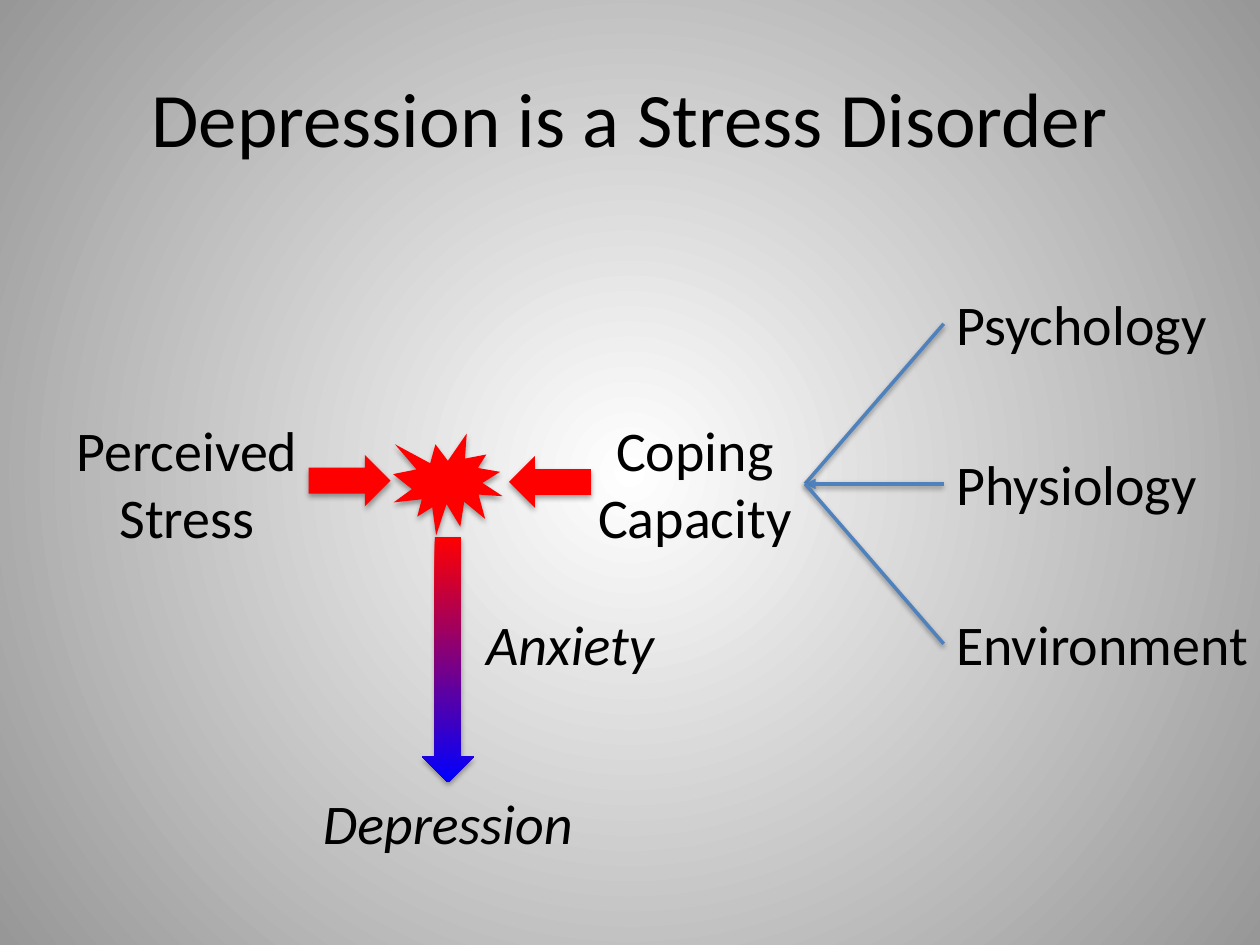
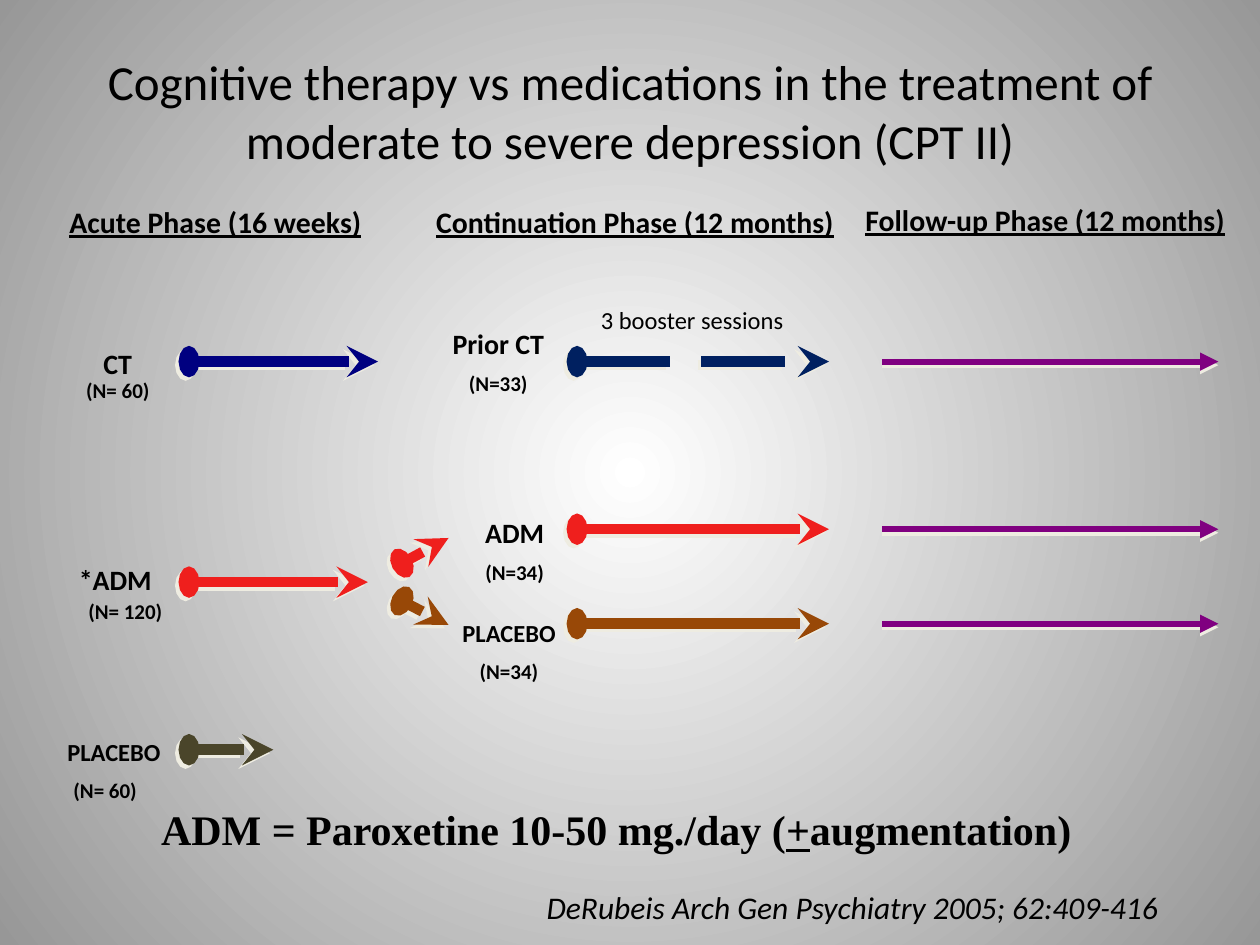
from dataclasses import dataclass

from lxml import etree
from pptx import Presentation
from pptx.dml.color import RGBColor
from pptx.enum.dml import MSO_LINE
from pptx.enum.shapes import MSO_CONNECTOR, MSO_SHAPE
from pptx.enum.text import MSO_ANCHOR, MSO_AUTO_SIZE, PP_ALIGN
from pptx.oxml.ns import qn
from pptx.util import Emu, Inches, Pt

STRAIGHT = MSO_CONNECTOR.STRAIGHT
BURST, RIGHT, LEFT_ARROW, DOWN = (
    MSO_SHAPE.EXPLOSION1, MSO_SHAPE.RIGHT_ARROW, MSO_SHAPE.LEFT_ARROW, MSO_SHAPE.DOWN_ARROW)
LONG_DASH = MSO_LINE.LONG_DASH
CENTER, LEFT = PP_ALIGN.CENTER, PP_ALIGN.LEFT
TOP, MIDDLE = MSO_ANCHOR.TOP, MSO_ANCHOR.MIDDLE
FIT = MSO_AUTO_SIZE.SHAPE_TO_FIT_TEXT

WIDTH, HEIGHT = Inches(10), Inches(7.5)
COLS, ROWS = 100, 75


@dataclass(frozen=True)
class Theme:
    font: str = "Calibri"
    serif: str = "Times New Roman"
    ink: str = "000000"
    white: str = "FFFFFF"
    edge: str = "979797"
    red: str = "FF0000"
    blue: str = "0000FF"
    steel: str = "4F81BD"
    navy: str = "000080"
    dark_navy: str = "002060"
    scarlet: str = "EF1F1D"
    brown: str = "984807"
    olive: str = "4A452A"
    purple: str = "800080"
    title: int = 44
    long_title: int = 28
    concept: int = 32
    note: int = 24
    source: int = 18
    heading: int = 17
    arm: int = 16
    small_arm: int = 14
    count: int = 12
    soft_shadow: tuple = ("000000", 38, 3.1, 1.6, 90)
    shape_shadow: tuple = ("000000", 35, 3.1, 1.8, 90)
    arm_shadow: tuple = ("EEECE1", 100, 0, 2.8, 135)
    follow_shadow: tuple = ("EEECE1", 100, 0, 2, 90)


T = Theme()


@dataclass(frozen=True)
class Box:
    x: float
    y: float
    w: float
    h: float

    def sub(self, x, y, w, h):
        return Box(self.x + x, self.y + y, w, h)

    def point(self, x, y):
        return (Emu(round((self.x + x) * WIDTH / COLS)),
                Emu(round((self.y + y) * HEIGHT / ROWS)))

    def emu(self):
        return (*self.point(0, 0), Emu(round(self.w * WIDTH / COLS)),
                Emu(round(self.h * HEIGHT / ROWS)))


def rgb(color):
    return RGBColor.from_string(color)


def style(r, size, font=T.font, bold=False, italic=False, underline=False):
    r.font.name, r.font.size = font, Pt(size)
    r.font.bold, r.font.italic, r.font.underline = bold, italic, underline
    r.font.color.rgb = rgb(T.ink)


def text_box(s, box, anchor=TOP, wrap=False):
    tf = s.shapes.add_textbox(*box.emu()).text_frame
    tf.word_wrap, tf.auto_size, tf.vertical_anchor = wrap, FIT, anchor
    return tf


def label(s, box, lines, align=CENTER, anchor=TOP, wrap=False, gap=0, **look):
    tf = text_box(s, box, anchor, wrap)
    tf.text = "\n".join(text for text, _ in lines)
    for i, (p, (_, size)) in enumerate(zip(tf.paragraphs, lines)):
        p.alignment = align
        if i and gap:
            p.space_before = Pt(size * gap)
        style(p.runs[0], size, **look)


def arm_label(s, box, *lines, **look):
    label(s, box, lines, anchor=MIDDLE, wrap=True, gap=0.5, bold=True, **look)


def add_shadow(sp, color, alpha, blur, dist, angle):
    sp_pr = sp._element.spPr
    for old in sp_pr.findall(qn("a:effectLst")):
        sp_pr.remove(old)
    effects = etree.SubElement(sp_pr, qn("a:effectLst"))
    outer = etree.SubElement(effects, qn("a:outerShdw"), blurRad=str(Pt(blur)),
                             dist=str(Pt(dist)), dir=str(angle * 60000),
                             algn="ctr", rotWithShape="0")
    clr = etree.SubElement(outer, qn("a:srgbClr"), val=color)
    etree.SubElement(clr, qn("a:alpha"), val=str(alpha * 1000))


def set_gradient(fill, *colors):
    fill.gradient()
    for stop, color in zip(fill.gradient_stops, colors):
        stop.color.rgb = rgb(color)


def shape(s, kind, box, *colors):
    sp = s.shapes.add_shape(kind, *box.emu())
    if len(colors) > 1:
        set_gradient(sp.fill, *colors)
        sp.fill.gradient_angle = 270
    else:
        sp.fill.solid()
        sp.fill.fore_color.rgb = rgb(colors[0])
    sp.line.fill.background()
    add_shadow(sp, *T.shape_shadow)


def line(s, start, end, color, width, shadow, head=None, tail=None, dash=None):
    cx = s.shapes.add_connector(STRAIGHT, *start, *end)
    cx.line.color.rgb = rgb(color)
    cx.line.width = Pt(width)
    if dash:
        cx.line.dash_style = dash
    ln = cx.line._get_or_add_ln()
    if head:
        etree.SubElement(ln, qn("a:headEnd"), type=head, w="med", len="sm")
    if tail:
        etree.SubElement(ln, qn("a:tailEnd"), type=tail)
    add_shadow(cx, *shadow)


def arm_arrow(s, start, end, color, dash=None):
    line(s, start, end, color, 6, T.arm_shadow, "oval", "stealth", dash)


def set_background(master):
    fill = master.background.fill
    set_gradient(fill, T.white, T.edge)
    grad = master.element.find(".//" + qn("p:bg")).find(".//" + qn("a:gradFill"))
    grad.remove(grad.find(qn("a:lin")))
    circle = etree.SubElement(grad, qn("a:path"), path="circle")
    etree.SubElement(circle, qn("a:fillToRect"), l="50000", t="50000", r="50000", b="50000")


def new_slide(prs, title, box, size):
    s = prs.slides.add_slide(prs.slide_layouts[5])
    sp = s.shapes.title
    sp.left, sp.top, sp.width, sp.height = box.emu()
    tf = sp.text_frame
    tf.text, tf.word_wrap, tf.vertical_anchor = title, True, MIDDLE
    tf.paragraphs[0].alignment = CENTER
    style(tf.paragraphs[0].runs[0], size)
    return s


def place_collision(s, box):
    for x, w, words in ((0, 19.7, ("Perceived", "Stress")),
                        (41.4, 17.5, ("Coping", "Capacity"))):
        label(s, box.sub(x, 0, w, box.h), [(word, T.concept) for word in words])
    shape(s, BURST, box.sub(26.2, 1.9, 8.7, 8.1), T.red)
    shape(s, RIGHT, box.sub(19.5, 3.6, 6.5, 4.1), T.red)
    shape(s, LEFT_ARROW, box.sub(35.4, 3.7, 6.5, 4.1), T.red)


def place_coping_factors(s, box):
    pitch, text_h, text_x = 12.7, 6.4, 11
    hub = box.point(0, box.h / 2)
    factors = (("Psychology", 22.1, None), ("Physiology", 21.3, "triangle"),
               ("Environment", 25.4, None))
    for i, (name, w, tail) in enumerate(factors):
        y = i * pitch
        label(s, box.sub(text_x, y, w, text_h), [(name, T.concept)], LEFT)
        line(s, box.point(text_x, y + text_h / 2), hub, T.steel, 2, T.soft_shadow, tail=tail)


def place_outcome(s, box):
    shape(s, DOWN, box.sub(9.5, 0, 4.1, 19.5), T.red, T.blue)
    label(s, box.sub(0, 19.5, 23.1, 6.4), [("Depression", T.concept)], italic=True)
    label(s, box.sub(13.6, 5.3, 16.6, 6.4), [("Anxiety", T.concept)], LEFT, italic=True)


def heading(s, box, text):
    arm_label(s, box, (text, T.heading), underline=True)


def place_acute_phase(s, box):
    heading(s, box.sub(0, 0, 34.2, 3.8), "Acute Phase (16 weeks)")
    arms = (
        ("CT", T.arm, (5.2, 11.3, 8.3, 3.7), "(N= 60)", (4.4, 13.8, 9.9, 3), 13, 30, T.navy),
        ("*ADM", T.arm, (5, 28.4, 8.3, 3.7), "(N= 120)", (3.3, 31.3, 13.3, 3), 30.5, 29.2,
         T.scarlet),
        ("PLACEBO", T.small_arm, (0.7, 42.3, 16.7, 3.3), "(N= 60)", (4.2, 45.5, 8.3, 3), 43.8,
         21.7, T.olive),
    )
    for name, size, name_at, count, count_at, y, end, color in arms:
        arm_label(s, box.sub(*name_at), (name, size))
        arm_label(s, box.sub(*count_at), (count, T.count))
        arm_arrow(s, box.point(15, y), box.point(end, y), color)


def place_split(s, box):
    arm_arrow(s, box.point(0, 2), box.point(box.w, 0), T.scarlet)
    arm_arrow(s, box.point(0, 5), box.point(box.w, box.h), T.brown)


def place_continuation_phase(s, box):
    heading(s, box.sub(0, 0, 44.2, 3.8), "Continuation Phase (12 months)")
    arms = (
        ("Prior CT", T.arm, "(N=33)", (5.8, 9.6, 10.9, 6.7), 13, T.dark_navy, LONG_DASH),
        ("ADM", T.arm, "(N=34)", (8.4, 24.6, 8.3, 6.7), 26.3, T.scarlet, None),
        ("PLACEBO", T.small_arm, "(N=34)", (2.5, 32.6, 19.2, 6.7), 33.8, T.brown, None),
    )
    for name, size, count, name_at, y, color, dash in arms:
        arm_label(s, box.sub(*name_at), (name, size), (count, T.count))
        arm_arrow(s, box.point(17.5, y), box.point(37.5, y), color, dash)
    label(s, box.sub(18.4, 8, 18.2, 3.3), [("3 booster sessions", T.small_arm)], LEFT)


def place_follow_up_phase(s, box):
    heading(s, box.sub(0, -0.2, 32.5, 3.8), "Follow-up Phase (12 months)")
    for y in (13, 26.3, 33.8):
        line(s, box.point(3.3, y), box.point(30, y), T.purple, 3.5, T.follow_shadow,
             tail="triangle")


def place_notes(s, box):
    p = text_box(s, box.sub(0, 0, 74.3, 5)).paragraphs[0]
    for part, underline in (("ADM = Paroxetine 10-50 mg./day (", False), ("+", True),
                            ("augmentation)", False)):
        r = p.add_run()
        r.text = part
        style(r, T.note, T.serif, bold=True, underline=underline)
    label(s, box.sub(30.6, 6.7, 56.7, 4),
          [("DeRubeis Arch Gen Psychiatry 2005; 62:409-416", T.source)], LEFT, italic=True)


def stress_slide(prs):
    s = new_slide(prs, "Depression is a Stress Disorder", Box(5, 3, 90, 12.5), T.title)
    place_collision(s, Box(5, 32.5, 58.9, 11.8))
    place_coping_factors(s, Box(63.9, 22.5, 36.4, 31.8))
    place_outcome(s, Box(24, 42.6, 30.2, 25.9))


def trial_slide(prs):
    s = new_slide(prs, "Cognitive therapy vs medications in the treatment of "
                  "moderate to severe depression (CPT II)", Box(5, 2.5, 90, 12.5), T.long_title)
    top, height = 15.7, 48.5
    place_acute_phase(s, Box(0, top, 34.2, height))
    place_split(s, Box(31.9, 42.7, 3.7, 6.9))
    place_continuation_phase(s, Box(28.3, top, 44.2, height))
    place_follow_up_phase(s, Box(66.7, top, 32.5, height))
    place_notes(s, Box(11.8, 63.3, 87.3, 10.7))


def main():
    prs = Presentation()
    prs.slide_width, prs.slide_height = WIDTH, HEIGHT
    set_background(prs.slide_master)
    stress_slide(prs)
    trial_slide(prs)
    prs.save("out.pptx")


if __name__ == "__main__":
    main()
